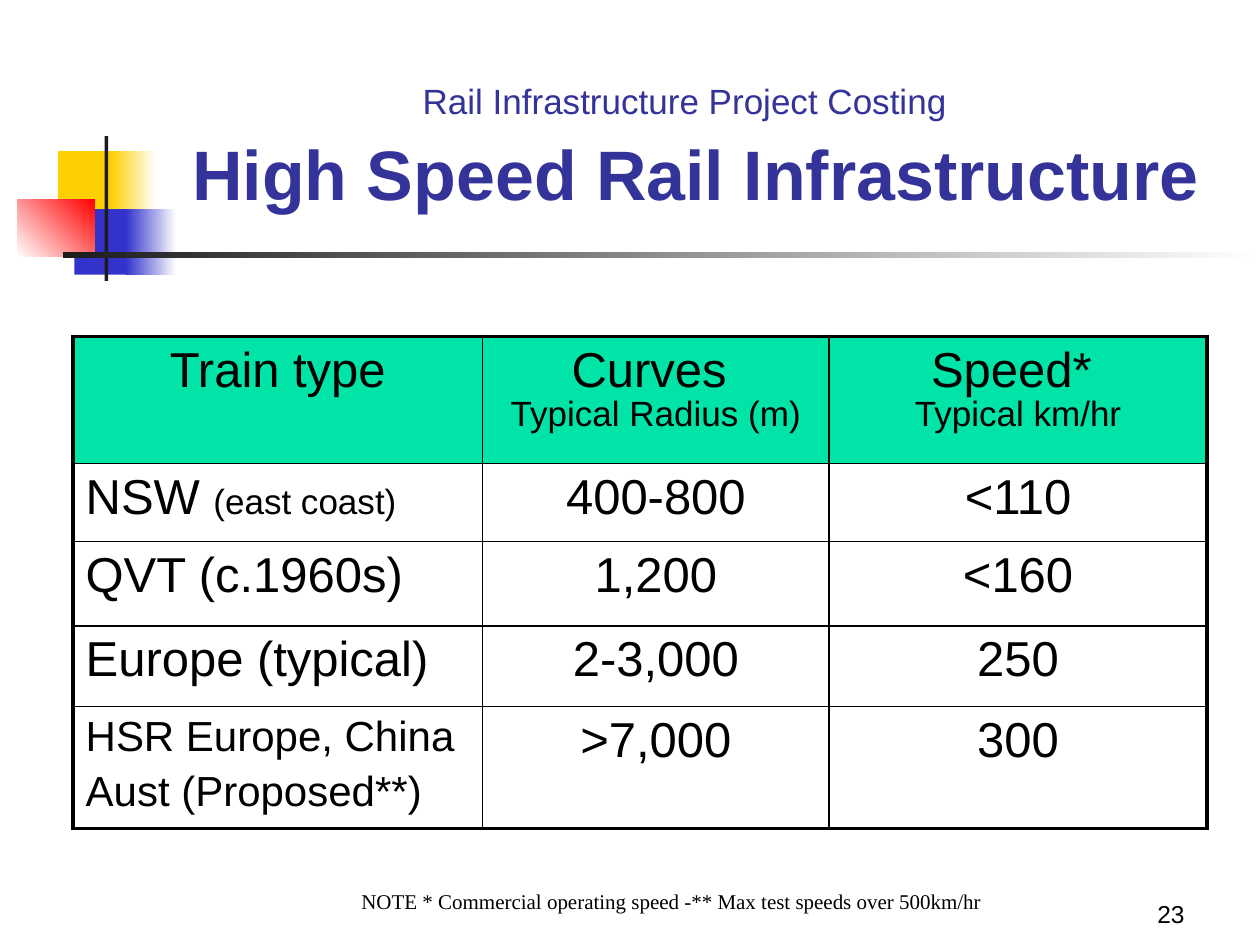
"""Build the high speed rail infrastructure slide with its curve and speed table."""
from lxml.etree import SubElement
from pptx import Presentation
from pptx.dml.color import RGBColor
from pptx.enum.shapes import MSO_SHAPE
from pptx.enum.text import MSO_ANCHOR, PP_ALIGN
from pptx.oxml.ns import qn
from pptx.util import Inches, Pt

THEME = {
    "black": "000000", "white": "FFFFFF", "ink": "1C1C1C", "title": "333399",
    "yellow": "FFCF01", "blue": "3333CC", "red": "FF0000", "header": "00E4A8",
    "font": "Arial", "note_font": "Times New Roman",
    "headline": 40, "gap": 44, "body": 28, "compact": 24, "small": 20,
    "number": 14, "note": 12, "outer_line": 2.25, "inner_line": 1,
}


def add_run(paragraph, text, size, color="black", font="font", bold=False):
    run = paragraph.add_run()
    run.text = text
    run.font.size = Pt(THEME[size])
    run.font.name = THEME[font]
    run.font.bold = bold
    run.font.color.rgb = RGBColor.from_string(THEME[color])


def add_border(cell, side, weight):
    line = SubElement(cell._tc.get_or_add_tcPr(), qn(f"a:{side}"), w=str(Pt(THEME[weight])))
    fill = SubElement(line, qn("a:solidFill"))
    SubElement(fill, qn("a:srgbClr"), val=THEME["black"])


prs = Presentation()
prs.slide_width, prs.slide_height = Inches(10), Inches(7.5)
slide = prs.slides.add_slide(prs.slide_layouts[6])

ornaments = [
    (0.46, 1.2, 0.48, 0.52, ["yellow"], 0),
    (0.88, 1.2, 0.36, 0.52, ["yellow", "white"], 0),
    (0.59, 1.66, 0.46, 0.52, ["blue"], 0),
    (1, 1.66, 0.4, 0.52, ["blue", "white"], 0),
    (0.14, 1.58, 0.61, 0.46, ["white", "red"], 45),
    (0.83, 1.08, 0.03, 1.15, ["ink"], 0),
    (0.5, 2, 9.5, 0.05, ["ink", "white"], 0),
]
for left, top, width, height, colors, angle in ornaments:
    ornament = slide.shapes.add_shape(
        MSO_SHAPE.RECTANGLE, Inches(left), Inches(top), Inches(width), Inches(height))
    ornament.shadow.inherit = False
    ornament.line.fill.background()
    if len(colors) == 1:
        ornament.fill.solid()
        ornament.fill.fore_color.rgb = RGBColor.from_string(THEME[colors[0]])
    else:
        ornament.fill.gradient()
        ornament.fill.gradient_angle = angle
        for stop, color in zip(ornament.fill.gradient_stops, colors):
            stop.color.rgb = RGBColor.from_string(THEME[color])

title = slide.shapes.add_textbox(Inches(1.26), Inches(0.68), Inches(8.52), Inches(1.07)).text_frame
title.word_wrap = True
title.vertical_anchor = MSO_ANCHOR.BOTTOM
heading = title.paragraphs[0]
heading.alignment = PP_ALIGN.CENTER
add_run(heading, "Rail Infrastructure Project Costing", "small", "title")
add_run(heading, " ", "gap", "title")
heading.add_line_break()
add_run(heading, "High Speed Rail Infrastructure", "headline", "title", bold=True)

train_rows = [
    [[[("Train type", "body")]],
     [[("Curves ", "body")], [("Typical Radius (m)", "small")]],
     [[("Speed* ", "body")], [("Typical km/hr", "small")]]],
    [[[("NSW ", "body"), ("(east coast)", "small")]], [[("400-800", "body")]], [[("<110", "body")]]],
    [[[("QVT (c.1960s)", "body")]], [[("1,200", "body")]], [[("<160", "body")]]],
    [[[("Europe (typical)", "body")]], [[("2-3,000", "body")]], [[("250", "body")]]],
    [[[("HSR Europe, China", "compact")], [("Aust (Proposed**)", "compact")]],
     [[(">7,000", "body")]], [[("300", "body")]]],
]
column_widths = [3.25, 2.75, 3]
row_heights = [1.01, 0.62, 0.67, 0.64, 0.64]
last_row, last_column = len(row_heights) - 1, len(column_widths) - 1

trains = slide.shapes.add_table(
    len(row_heights), len(column_widths), Inches(0.58), Inches(2.67),
    Inches(sum(column_widths)), Inches(sum(row_heights))).table
for column, width in zip(trains.columns, column_widths):
    column.width = Inches(width)
for row, height in zip(trains.rows, row_heights):
    row.height = Inches(height)

for r, train_row in enumerate(train_rows):
    for c, lines in enumerate(train_row):
        cell = trains.cell(r, c)
        edges = {"lnL": c == 0, "lnR": c == last_column, "lnT": r == 0, "lnB": r == last_row}
        for side, is_outer in edges.items():
            add_border(cell, side, "outer_line" if is_outer else "inner_line")
        if r == 0:
            cell.fill.solid()
            cell.fill.fore_color.rgb = RGBColor.from_string(THEME["header"])
        else:
            cell.fill.background()
        for i, runs in enumerate(lines):
            paragraph = cell.text_frame.add_paragraph() if i else cell.text_frame.paragraphs[0]
            paragraph.alignment = PP_ALIGN.LEFT if r and c == 0 else PP_ALIGN.CENTER
            if i:
                paragraph.space_before = Pt(0.2 * THEME[runs[0][1]])
                paragraph.line_spacing = 1.0 if r else 0.7
            for text, size in runs:
                add_run(paragraph, text, size)

footnote = slide.shapes.add_textbox(Inches(2.77), Inches(7), Inches(5.14), Inches(0.3)).text_frame
footnote.word_wrap = False
add_run(footnote.paragraphs[0],
        "NOTE * Commercial operating speed -** Max test speeds over 500km/hr",
        "note", font="note_font")

page_number = slide.shapes.add_textbox(Inches(7.42), Inches(6.92), Inches(2.08), Inches(0.5)).text_frame
page_number.word_wrap = True
page_number.vertical_anchor = MSO_ANCHOR.BOTTOM
page_number.paragraphs[0].alignment = PP_ALIGN.RIGHT
add_run(page_number.paragraphs[0], "23", "number")

prs.save("out.pptx")
